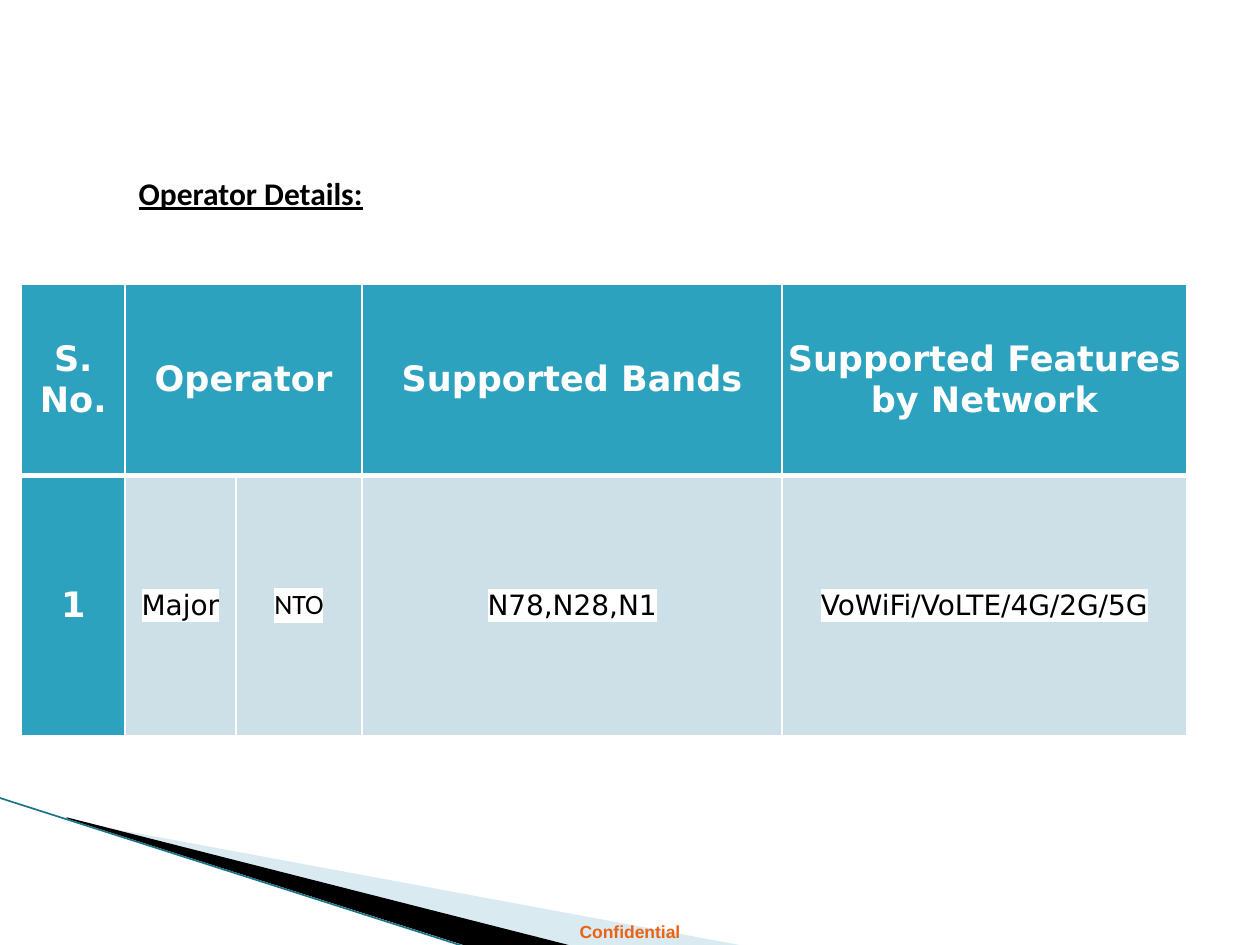
from typing import NamedTuple

from lxml.etree import SubElement
from pptx import Presentation
from pptx.dml.color import RGBColor
from pptx.enum.text import MSO_ANCHOR, MSO_AUTO_SIZE, PP_ALIGN
from pptx.oxml import parse_xml
from pptx.oxml.ns import nsdecls, qn
from pptx.util import Pt

COLORS = {
    "teal": "2DA2BF",
    "pale": "CDE0E8",
    "mist": "A0CBDC",
    "edge": "1B7587",
    "orange": "EB6312",
    "black": "000000",
    "white": "FFFFFF",
}
SANS = "DejaVu Sans"


class Wedge(NamedTuple):
    points: list
    color: str
    alpha: int = 100


class Entry(NamedTuple):
    text: str
    head: bool = False
    face: str = SANS


WEDGES = [
    Wedge([(39.6, 468.7), (428.4, 540.7), (328.3, 540.7), (39.6, 468)], "mist", 40),
    Wedge([(38.2, 467.3), (329, 540.7), (267.8, 541.4), (38.9, 468)], "black"),
]
WIDTHS = [59, 63.4, 72.2, 240, 231.2]
HEIGHTS = [109.5, 148.5]
ROWS = [
    [Entry("S. No.", True), Entry("Operator", True), Entry("", True),
     Entry("Supported Bands", True), Entry("Supported Features by Network", True)],
    [Entry("1", True), Entry("Major"), Entry("NTO", face="Calibri"),
     Entry("N78,N28,N1"), Entry("VoWiFi/VoLTE/4G/2G/5G")],
]


def rgb(name: str) -> RGBColor:
    return RGBColor.from_string(COLORS[name])


def style(font, face: str, size: float, color: str, bold: bool = True) -> None:
    font.name, font.size, font.bold = face, Pt(size), bold
    font.color.rgb = rgb(color)


def draw_wedge(shapes, wedge: Wedge) -> None:
    start, *rest = wedge.points
    pen = shapes.build_freeform(*start, scale=Pt(1))
    pen.add_line_segments(rest)
    shape = pen.convert_to_shape()
    shape.shadow.inherit = False
    shape.line.fill.background()
    shape.fill.solid()
    shape.fill.fore_color.rgb = rgb(wedge.color)
    if wedge.alpha < 100:
        tint = shape.fill._xPr.find(".//" + qn("a:srgbClr"))
        SubElement(tint, qn("a:alpha"), val=str(wedge.alpha * 1000))


def draw_edge(shapes) -> None:
    line = shapes.add_connector(1, Pt(-0.7), Pt(455.8), Pt(267.1), Pt(541.4))
    line.line.color.rgb = rgb("edge")
    line.line.width = Pt(0.95)
    SubElement(line._element.spPr, qn("a:effectLst"))


def add_borders(cell, row: int) -> None:
    widths = {"L": 1, "R": 1, "T": 3 if row else 1, "B": 1 if row else 3}
    props = cell._tc.get_or_add_tcPr()
    for spot, (side, width) in enumerate(widths.items()):
        props.insert(spot, parse_xml(
            f'<a:ln{side} {nsdecls("a")} w="{Pt(width)}"><a:solidFill>'
            f'<a:srgbClr val="{COLORS["white"]}"/></a:solidFill></a:ln{side}>'))


def fill_cell(cell, entry: Entry, row: int) -> None:
    cell.fill.solid()
    cell.fill.fore_color.rgb = rgb("teal" if entry.head else "pale")
    add_borders(cell, row)
    cell.vertical_anchor = MSO_ANCHOR.MIDDLE
    cell.margin_left = cell.margin_right = cell.margin_top = cell.margin_bottom = 0
    if not entry.text:
        return
    cell.text_frame.text = entry.text
    para = cell.text_frame.paragraphs[0]
    para.alignment = PP_ALIGN.CENTER
    run = para.runs[0]
    style(run.font, entry.face, 20 if entry.head else 16,
          "white" if entry.head else "black", entry.head)
    # The highlight follows the text fill
    shade = COLORS["teal" if entry.head else "white"]
    run._r.rPr.find(qn("a:solidFill")).addnext(parse_xml(
        f'<a:highlight {nsdecls("a")}><a:srgbClr val="{shade}"/></a:highlight>'))


def draw_table(shapes) -> None:
    table = shapes.add_table(len(HEIGHTS), len(WIDTHS), Pt(12.4), Pt(162.2),
                             Pt(sum(WIDTHS)), Pt(sum(HEIGHTS))).table
    for col, width in zip(table.columns, WIDTHS):
        col.width = Pt(width)
    for row, height in zip(table.rows, HEIGHTS):
        row.height = Pt(height)
    for r, entries in enumerate(ROWS):
        for c, entry in enumerate(entries):
            fill_cell(table.cell(r, c), entry, r)
    table.cell(0, 1).merge(table.cell(0, 2))


def draw_footer(shapes) -> None:
    box = shapes.add_textbox(0, Pt(522.7), Pt(720), Pt(19.4))
    frame = box.text_frame
    frame.word_wrap = True
    frame.text = "Confidential"
    para = frame.paragraphs[0]
    para.alignment = PP_ALIGN.CENTER
    style(para.runs[0].font, "Arial", 10, "orange")


def set_title(title) -> None:
    title.left, title.top, title.width, title.height = Pt(72), Pt(95.8), Pt(468), Pt(29)
    frame = title.text_frame
    frame.text = "Operator Details:"
    frame.auto_size = MSO_AUTO_SIZE.NONE
    frame.vertical_anchor = MSO_ANCHOR.TOP
    para = frame.paragraphs[0]
    para.alignment = PP_ALIGN.LEFT
    font = para.runs[0].font
    style(font, "Calibri", 18, "black")
    font.underline = True


def main() -> None:
    deck = Presentation()
    deck.slide_width, deck.slide_height = Pt(720), Pt(540)
    slide = deck.slides.add_slide(deck.slide_layouts[5])
    shapes = slide.shapes

    # Corner decoration
    for wedge in WEDGES:
        draw_wedge(shapes, wedge)
    draw_edge(shapes)

    # Content
    draw_footer(shapes)
    draw_table(shapes)
    set_title(shapes.title)
    deck.save("out.pptx")


if __name__ == "__main__":
    main()
